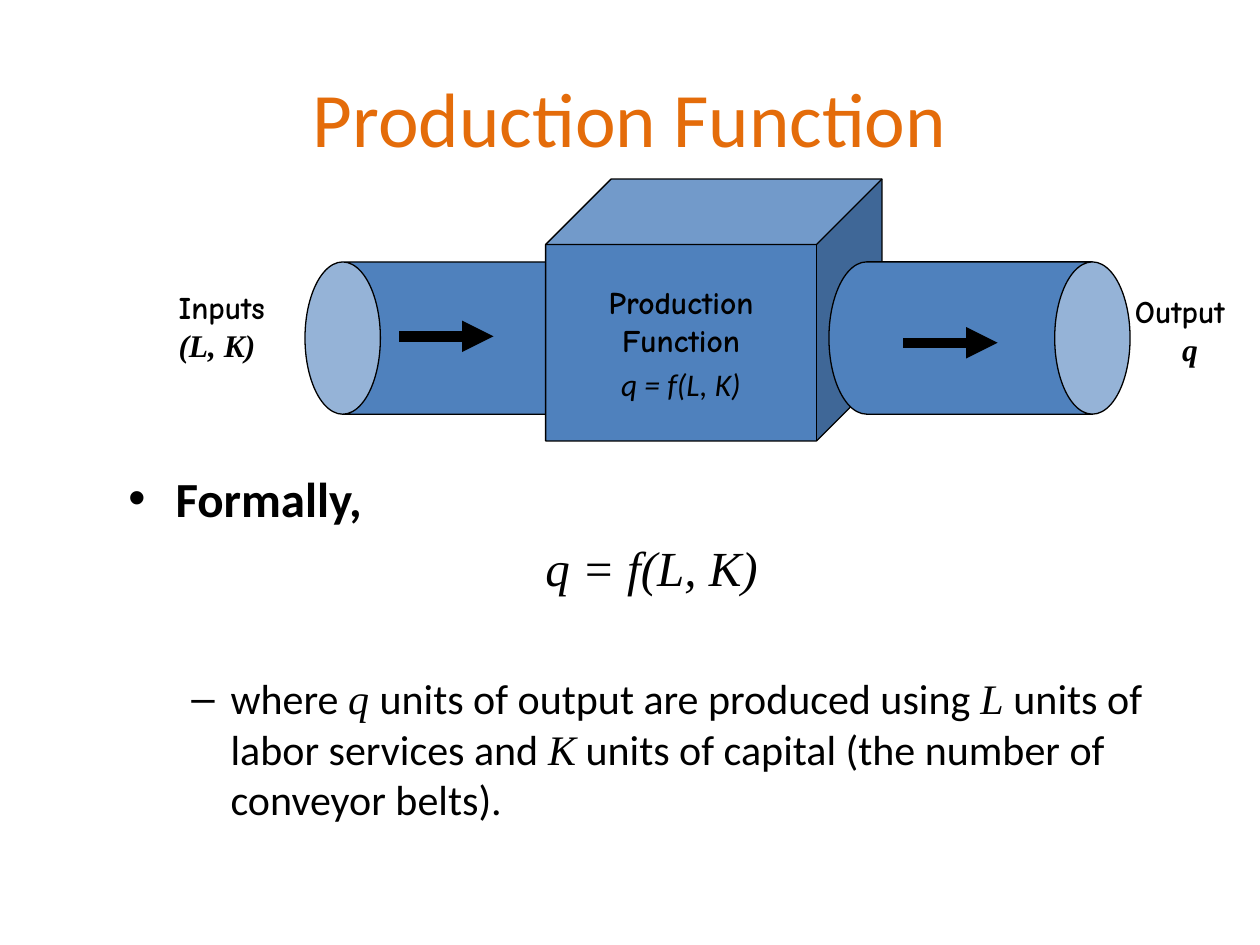
from lxml.etree import SubElement
from pptx import Presentation
from pptx.dml.color import RGBColor
from pptx.enum.shapes import MSO_CONNECTOR as Connector, MSO_SHAPE as Shape
from pptx.enum.text import MSO_ANCHOR as Anchor, PP_ALIGN as Align
from pptx.oxml.ns import qn
from pptx.util import Cm, Pt

BLACK, BLUE, ORANGE = "000000", "4F81BD", "E46C0A"
SANS, SERIF, COMIC = "Calibri", "Times New Roman", "Comic Neue"


def paint(color_format, hex_color):
    color_format.rgb = RGBColor.from_string(hex_color)


def write(para, text, size=18, font=SANS, color=BLACK, bold=False, italic=False):
    span = para.add_run()
    span.text = text
    span.font.size = Pt(size)
    span.font.name = font
    span.font.bold = bold
    span.font.italic = italic
    paint(span.font.color, color)


deck = Presentation()
deck.slide_width, deck.slide_height = Cm(25.4), Cm(19.05)
page = deck.slides.add_slide(deck.slide_layouts[5])

title = page.shapes.title
title.left, title.top, title.width, title.height = Cm(1.27), Cm(0.76), Cm(22.86), Cm(3.18)
title.text_frame.vertical_anchor = Anchor.MIDDLE
heading = title.text_frame.paragraphs[0]
heading.alignment = Align.CENTER
write(heading, "Production Function", size=44, color=ORANGE)

machine = []
for kind, left, top, width, height, rotation, adjustment in [
    (Shape.CAN, 7.65, 3.78, 3.07, 6.07, 270, 0.495),
    (Shape.CUBE, 11, 3.61, 6.78, 5.28, 0, 0.25),
    (Shape.CAN, 18.21, 3.78, 3.07, 6.07, 90, 0.495),
]:
    part = page.shapes.add_shape(kind, Cm(left), Cm(top), Cm(width), Cm(height))
    part.rotation = rotation
    part.adjustments[0] = adjustment
    part.shadow.inherit = False
    part.fill.solid()
    paint(part.fill.fore_color, BLUE)
    paint(part.line.color, BLACK)
    part.line.width = Pt(0.75)
    machine.append(part)

cube_frame = machine[1].text_frame
cube_frame.vertical_anchor = Anchor.MIDDLE
cube_frame.word_wrap = True
name_top = cube_frame.paragraphs[0]
name_bottom = cube_frame.add_paragraph()
formula = cube_frame.add_paragraph()
formula.space_before = Pt(3.6)
for para in cube_frame.paragraphs:
    para.alignment = Align.CENTER
write(name_top, "Production", font=COMIC, bold=True)
write(name_bottom, "Function", font=COMIC, bold=True)
write(formula, "q = f(L, K)", italic=True)

for left, top in [(8.05, 6.78), (18.21, 6.91)]:
    arrow = page.shapes.add_connector(
        Connector.STRAIGHT, Cm(left), Cm(top), Cm(left + 1.9), Cm(top))
    paint(arrow.line.color, BLACK)
    arrow.line.width = Pt(6)
    SubElement(arrow.line._get_or_add_ln(), qn("a:tailEnd"), type="triangle")
    SubElement(arrow._element.spPr, qn("a:effectLst"))

for label, symbol, left, top, width, indent in [
    ("Inputs", "(L, K)", 3.35, 5.69, 3.12, 0),
    ("Output", "q", 22.63, 5.77, 3.33, 0.95),
]:
    box = page.shapes.add_textbox(Cm(left), Cm(top), Cm(width), Cm(2.29))
    frame = box.text_frame
    frame.word_wrap = True
    write(frame.paragraphs[0], label, font=COMIC, bold=True)
    para = frame.add_paragraph()
    para._p.get_or_add_pPr().set("marL", str(Cm(indent)))
    write(para, symbol, font=SERIF, bold=True, italic=True)

body = page.shapes.add_textbox(Cm(2.34), Cm(9.32), Cm(21.59), Cm(7.82)).text_frame
body.word_wrap = True
formally = body.paragraphs[0]
equation = body.add_paragraph()
explanation = body.add_paragraph()

for para, bullet, margin, hanging in [
    (formally, "•", 0.95, 0.95),
    (explanation, "–", 2.06, 0.79),
]:
    properties = para._p.get_or_add_pPr()
    properties.set("marL", str(Cm(margin)))
    properties.set("indent", str(-Cm(hanging)))
    SubElement(properties, qn("a:buFont"), typeface="Arial")
    SubElement(properties, qn("a:buChar"), char=bullet)

write(formally, "Formally,", size=28, bold=True)
equation.alignment = Align.CENTER
equation.space_before = Pt(5.6)
write(equation, "q = f(L, K)", size=28, font=SERIF, italic=True)

explanation.space_before = Pt(44)
for text, is_symbol in [
    ("where ", False),
    ("q ", True),
    ("units of output are produced using ", False),
    ("L ", True),
    ("units of labor services and ", False),
    ("K", True),
    (" units of capital (the number of conveyor belts).", False),
]:
    write(explanation, text, size=24, font=SERIF if is_symbol else SANS, italic=is_symbol)

deck.save("out.pptx")
